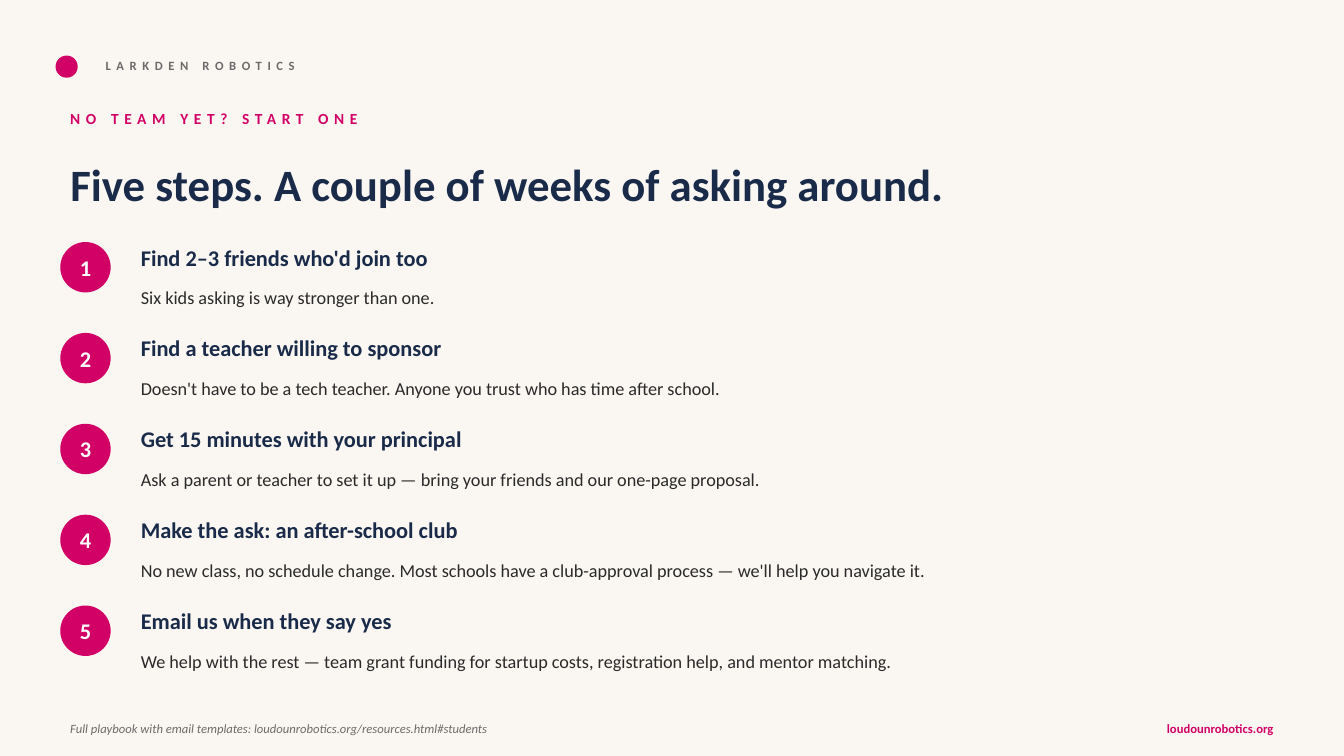
"""Build the five-step slide on starting a school robotics team."""
from dataclasses import dataclass

from pptx import Presentation
from pptx.dml.color import RGBColor
from pptx.enum.shapes import MSO_SHAPE
from pptx.enum.text import MSO_ANCHOR, MSO_AUTO_SIZE, PP_ALIGN
from pptx.util import Cm, Pt

OVAL = MSO_SHAPE.OVAL
TOP, MIDDLE = MSO_ANCHOR.TOP, MSO_ANCHOR.MIDDLE
LEFT, CENTER, RIGHT = PP_ALIGN.LEFT, PP_ALIGN.CENTER, PP_ALIGN.RIGHT
NO_AUTOFIT = MSO_AUTO_SIZE.NONE

FONT = "Calibri"
CREAM, PINK, NAVY = "FAF7F2", "D10165", "1A2B4A"
GRAY, INK, WHITE = "6B6B6B", "2A2A2A", "FFFFFF"

MARGIN, STEP_LEFT, STEP_WIDTH = 1.52, 3.3, 21.59
FIRST_STEP, STEP_PITCH, BADGE = 6.1, 2.29, 1.27


@dataclass(frozen=True)
class Style:
    size: int
    color: str
    bold: bool = False
    italic: bool = False
    spacing: int = 0
    align: PP_ALIGN = LEFT
    anchor: MSO_ANCHOR = MIDDLE


@dataclass(frozen=True)
class Label:
    text: str
    left: float
    top: float
    width: float
    height: float
    style: Style


@dataclass(frozen=True)
class Step:
    heading: str
    detail: str


TITLE_STYLE = Style(32, NAVY, bold=True, anchor=TOP)
BADGE_STYLE = Style(16, WHITE, bold=True, align=CENTER)
HEADING_STYLE = Style(16, NAVY, bold=True)
DETAIL_STYLE = Style(13, INK)

TITLE = Label("Five steps. A couple of weeks of asking around.",
              MARGIN, 3.81, 30.81, 2.92, TITLE_STYLE)

LABELS = [
    Label("LARKDEN ROBOTICS", 2.41, 1.27, 12.7, 0.76,
          Style(9, GRAY, bold=True, spacing=4)),
    Label("NO TEAM YET? START ONE", MARGIN, 2.54, 20.32, 0.89,
          Style(11, PINK, bold=True, spacing=4)),
    Label("Full playbook with email templates: loudounrobotics.org/resources.html#students",
          MARGIN, 17.98, 30.81, 0.76, Style(9, GRAY, italic=True)),
    Label("loudounrobotics.org", 26.24, 17.98, 6.1, 0.76,
          Style(9, PINK, bold=True, align=RIGHT)),
]

STEPS = [
    Step("Find 2–3 friends who'd join too",
         "Six kids asking is way stronger than one."),
    Step("Find a teacher willing to sponsor",
         "Doesn't have to be a tech teacher. Anyone you trust who has time after school."),
    Step("Get 15 minutes with your principal",
         "Ask a parent or teacher to set it up — bring your friends and our one-page proposal."),
    Step("Make the ask: an after-school club",
         "No new class, no schedule change. Most schools have a club-approval process"
         " — we'll help you navigate it."),
    Step("Email us when they say yes",
         "We help with the rest — team grant funding for startup costs,"
         " registration help, and mentor matching."),
]


def rgb(value: str) -> RGBColor:
    return RGBColor.from_string(value)


def write(shape, text: str, style: Style) -> None:
    tf = shape.text_frame
    tf.word_wrap = True
    tf.auto_size = NO_AUTOFIT
    tf.vertical_anchor = style.anchor
    p = tf.paragraphs[0]
    p.alignment = style.align
    r = p.add_run()
    r.text = text
    font = p.font
    font.name, font.size = FONT, Pt(style.size)
    font.bold, font.italic = style.bold, style.italic
    font.color.rgb = rgb(style.color)
    if style.spacing:
        r._r.get_or_add_rPr().set("spc", str(style.spacing * 100))


def add_title(s, label: Label) -> None:
    title = s.shapes.title
    title.left, title.top = Cm(label.left), Cm(label.top)
    title.width, title.height = Cm(label.width), Cm(label.height)
    write(title, label.text, label.style)


def add_label(s, label: Label) -> None:
    box = s.shapes.add_textbox(Cm(label.left), Cm(label.top),
                               Cm(label.width), Cm(label.height))
    write(box, label.text, label.style)


def add_dot(s, left: float, top: float, size: float):
    dot = s.shapes.add_shape(OVAL, Cm(left), Cm(top), Cm(size), Cm(size))
    dot.shadow.inherit = False
    dot.fill.solid()
    dot.fill.fore_color.rgb = rgb(PINK)
    dot.line.fill.background()
    return dot


def add_step(s, number: int, step: Step) -> None:
    top = FIRST_STEP + (number - 1) * STEP_PITCH
    badge = add_dot(s, MARGIN, top, BADGE)
    tf = badge.text_frame
    tf.margin_left = tf.margin_right = tf.margin_top = tf.margin_bottom = 0
    write(badge, str(number), BADGE_STYLE)
    add_label(s, Label(step.heading, STEP_LEFT, top - 0.13, STEP_WIDTH, 1.02, HEADING_STYLE))
    add_label(s, Label(step.detail, STEP_LEFT, top + 0.76, STEP_WIDTH, 1.27, DETAIL_STYLE))


def main() -> None:
    prs = Presentation()
    prs.slide_width, prs.slide_height = Cm(33.87), Cm(19.05)
    s = prs.slides.add_slide(prs.slide_layouts[5])
    s.background.fill.solid()
    s.background.fill.fore_color.rgb = rgb(CREAM)
    add_title(s, TITLE)
    add_dot(s, 1.4, 1.4, 0.56)
    for label in LABELS:
        add_label(s, label)
    for number, step in enumerate(STEPS, 1):
        add_step(s, number, step)
    prs.save("out.pptx")


if __name__ == "__main__":
    main()
